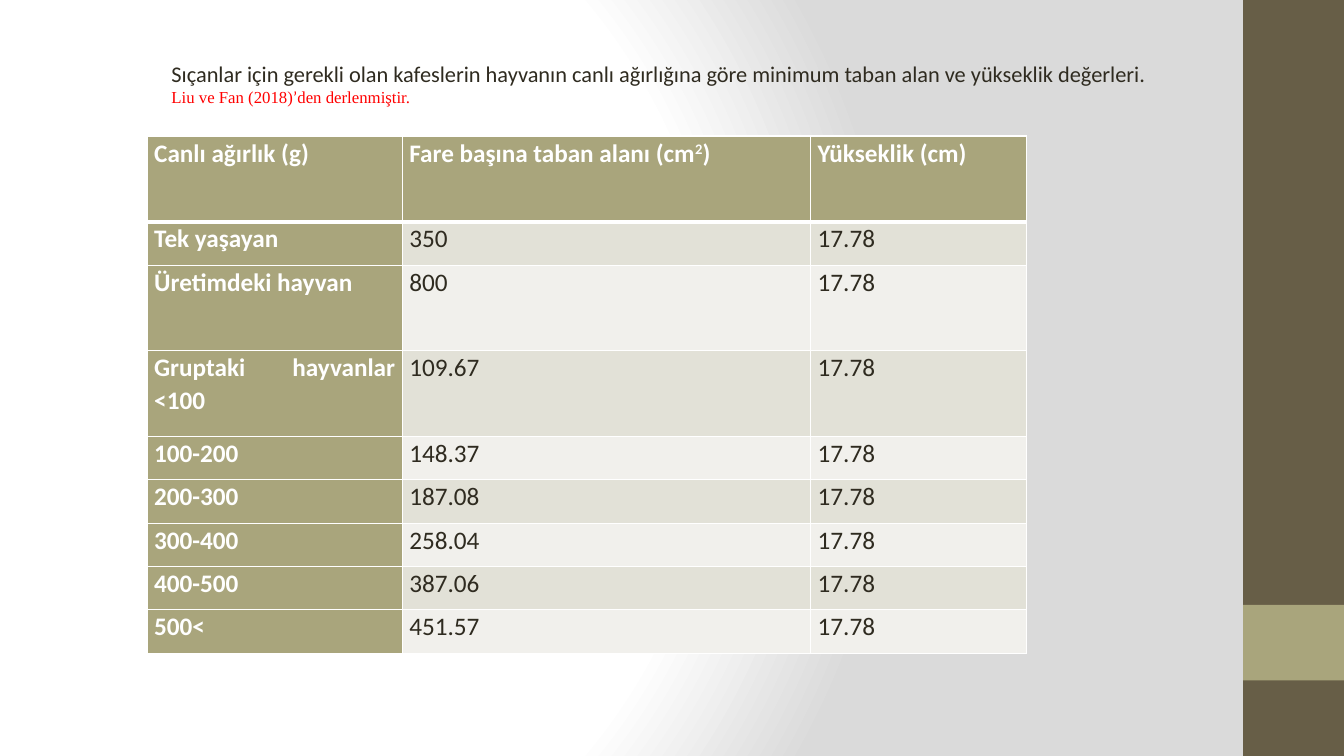
from lxml import etree
from pptx import Presentation
from pptx.dml.color import RGBColor
from pptx.enum.shapes import MSO_SHAPE
from pptx.enum.text import MSO_ANCHOR, MSO_AUTO_SIZE, PP_ALIGN
from pptx.oxml import parse_xml
from pptx.util import Inches, Pt

RECTANGLE = MSO_SHAPE.RECTANGLE
MIDDLE = MSO_ANCHOR.MIDDLE
FIT_SHAPE = MSO_AUTO_SIZE.SHAPE_TO_FIT_TEXT
JUSTIFY = PP_ALIGN.JUSTIFY
TITLE_ONLY = 5

DRAWING = "http://schemas.openxmlformats.org/drawingml/2006/main"
SLIDE = "http://schemas.openxmlformats.org/presentationml/2006/main"

WHITE = "FFFFFF"
GREY = "DADADA"
INK = "2F2B20"
RED = "FF0000"
BROWN = "675E47"
OLIVE = "A9A57C"
BANDS = ("F1F0EC", "E2E1D7")

SANS = "Calibri"
SERIF = "Times New Roman"

HEIGHT = "17.78"
HEADINGS = ("Canlı ağırlık (g)", "Fare başına taban alanı (cm²)", "Yükseklik (cm)")
FLOOR_AREAS = (
    ("Tek yaşayan", "350"),
    ("Üretimdeki hayvan", "800"),
    ("Gruptaki hayvanlar <100", "109.67"),
    ("100-200", "148.37"),
    ("200-300", "187.08"),
    ("300-400", "258.04"),
    ("400-500", "387.06"),
    ("500<", "451.57"),
)
COLUMN_WIDTHS = (2.53, 4.05, 2.14)
ROW_HEIGHT = 0.43
TALL_ROW_HEIGHT = 0.85
TALL_ROWS = (0, 2, 3)


def colour(value):
    return RGBColor.from_string(value)


def add_span(para, text, size, font, value, bold=False):
    span = para.add_run()
    span.text = text
    span.font.size = Pt(size)
    span.font.name = font
    span.font.bold = bold
    span.font.color.rgb = colour(value)
    return span


def set_background(page):
    stops = "".join(
        f'<a:gs pos="{position * 1000}"><a:srgbClr val="{value}"/></a:gs>'
        for position, value in ((0, WHITE), (75, WHITE), (100, GREY))
    )
    background = parse_xml(
        f'<p:bg xmlns:p="{SLIDE}" xmlns:a="{DRAWING}"><p:bgPr>'
        f'<a:gradFill rotWithShape="1"><a:gsLst>{stops}</a:gsLst>'
        '<a:path path="circle">'
        '<a:fillToRect l="20000" t="50000" r="100000" b="50000"/>'
        "</a:path></a:gradFill><a:effectLst/></p:bgPr></p:bg>"
    )
    page.element.cSld.insert(0, background)


def add_block(page, left, top, width, height, value):
    box = page.shapes.add_shape(
        RECTANGLE, Inches(left), Inches(top), Inches(width), Inches(height)
    )
    box.shadow.inherit = False
    box.fill.solid()
    box.fill.fore_color.rgb = colour(value)
    box.line.fill.background()


def write_title(page):
    title = page.shapes.title
    title.left, title.top = Inches(1.6), Inches(0.54)
    title.width, title.height = Inches(10.1), Inches(0.57)
    frame = title.text_frame
    frame.word_wrap = True
    frame.auto_size = FIT_SHAPE
    frame.vertical_anchor = MIDDLE
    heading = frame.paragraphs[0]
    source = frame.add_paragraph()
    heading.alignment = source.alignment = JUSTIFY
    add_span(
        heading,
        "Sıçanlar için gerekli olan kafeslerin hayvanın canlı ağırlığına göre "
        "minimum taban alan ve yükseklik değerleri.",
        16, SANS, INK,
    )
    add_span(source, "Liu ve Fan (2018)", 12, SERIF, RED)
    add_span(source, "’", 12, SANS, RED)
    add_span(source, "den derlenmiştir.", 12, SERIF, RED)


def set_borders(cell, top, bottom):
    properties = cell._tc.get_or_add_tcPr()
    sides = (("lnL", 1), ("lnR", 1), ("lnT", top), ("lnB", bottom))
    for index, (side, points) in enumerate(sides):
        line = etree.Element(f"{{{DRAWING}}}{side}", w=str(Pt(points)))
        fill = etree.SubElement(line, f"{{{DRAWING}}}solidFill")
        etree.SubElement(fill, f"{{{DRAWING}}}srgbClr", val=WHITE)
        properties.insert(index, line)


def fill_cell(cell, text, row, column):
    emphasized = row == 0 or column == 0
    cell.margin_left = cell.margin_right = Inches(0.07)
    cell.margin_top = cell.margin_bottom = 0
    cell.fill.solid()
    cell.fill.fore_color.rgb = colour(OLIVE if emphasized else BANDS[row % 2])
    set_borders(cell, 3 if row == 1 else 1, 3 if row == 0 else 1)
    para = cell.text_frame.paragraphs[0]
    para.alignment = JUSTIFY
    para.line_spacing = 1.07
    value = WHITE if emphasized else INK
    before, square, after = text.partition("²")
    add_span(para, before, 18, SANS, value, emphasized)
    if square:
        exponent = add_span(para, "2", 18, SANS, value, emphasized)
        exponent.font._element.set("baseline", "30000")
        add_span(para, after, 18, SANS, value, emphasized)


def add_cage_table(page):
    rows = [HEADINGS] + [(weight, area, HEIGHT) for weight, area in FLOOR_AREAS]
    heights = [
        TALL_ROW_HEIGHT if row in TALL_ROWS else ROW_HEIGHT
        for row in range(len(rows))
    ]
    table = page.shapes.add_table(
        len(rows), len(HEADINGS), Inches(1.46), Inches(1.35),
        Inches(sum(COLUMN_WIDTHS)), Inches(sum(heights)),
    ).table
    table.first_col = True
    for column, width in enumerate(COLUMN_WIDTHS):
        table.columns[column].width = Inches(width)
    for row, (height, texts) in enumerate(zip(heights, rows)):
        table.rows[row].height = Inches(height)
        for column, text in enumerate(texts):
            fill_cell(table.cell(row, column), text, row, column)


def main():
    deck = Presentation()
    deck.slide_width, deck.slide_height = Inches(13.33), Inches(7.5)
    page = deck.slides.add_slide(deck.slide_layouts[TITLE_ONLY])
    set_background(page)
    add_block(page, 12.33, 0, 1, 7.5, BROWN)
    add_block(page, 12.33, 6, 1, 0.75, OLIVE)
    add_cage_table(page)
    write_title(page)
    deck.save("out.pptx")


if __name__ == "__main__":
    main()
